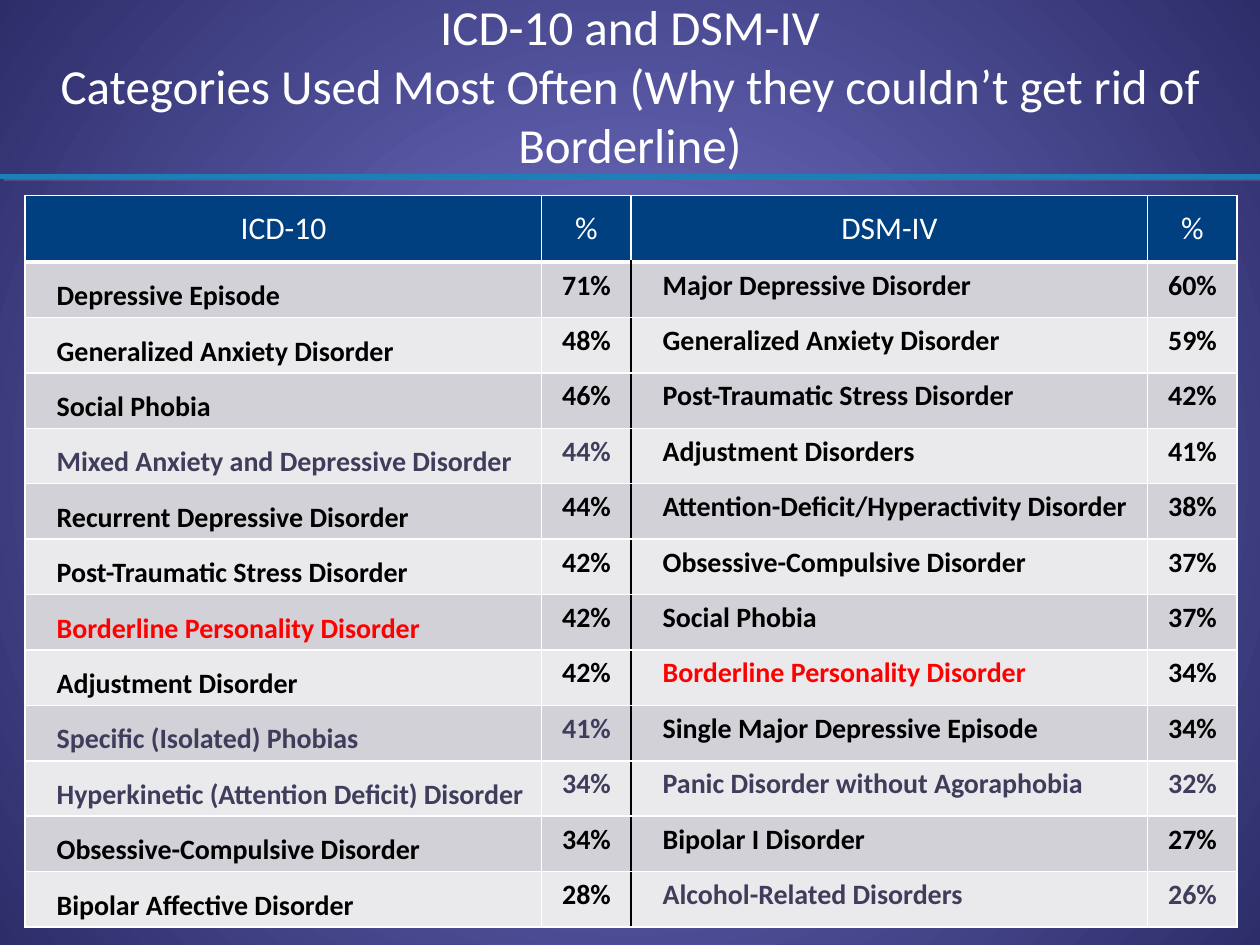
from lxml.etree import SubElement
from pptx import Presentation
from pptx.dml.color import RGBColor
from pptx.enum.shapes import MSO_CONNECTOR
from pptx.enum.text import MSO_ANCHOR, PP_ALIGN
from pptx.oxml import parse_xml
from pptx.oxml.ns import nsdecls, qn
from pptx.util import Inches, Pt

FONT = "Calibri"
WHITE, BLACK, RED, MUTED = "FFFFFF", "000000", "FF0000", "3E3E5C"
HEADER_FILL = "004080"
BAND_FILLS = ("D2D1D7", "EAEAEC")

TITLE = (
    "ICD-10 and DSM-IV",
    "Categories Used Most Often (Why they couldn’t get rid of Borderline)",
)
HEADINGS = ("ICD-10", "%", "DSM-IV", "%")
CATEGORIES = (
    ("Depressive Episode", "71%", "Major Depressive Disorder", "60%"),
    ("Generalized Anxiety Disorder", "48%", "Generalized Anxiety Disorder", "59%"),
    ("Social Phobia", "46%", "Post-Traumatic Stress Disorder", "42%"),
    ("Mixed Anxiety and Depressive Disorder", "44%", "Adjustment Disorders", "41%"),
    ("Recurrent Depressive Disorder", "44%",
     "Attention-Deficit/Hyperactivity Disorder", "38%"),
    ("Post-Traumatic Stress Disorder", "42%", "Obsessive-Compulsive Disorder", "37%"),
    ("Borderline Personality Disorder", "42%", "Social Phobia", "37%"),
    ("Adjustment Disorder", "42%", "Borderline Personality Disorder", "34%"),
    ("Specific (Isolated) Phobias", "41%", "Single Major Depressive Episode", "34%"),
    ("Hyperkinetic (Attention Deficit) Disorder", "34%",
     "Panic Disorder without Agoraphobia", "32%"),
    ("Obsessive-Compulsive Disorder", "34%", "Bipolar I Disorder", "27%"),
    ("Bipolar Affective Disorder", "28%", "Alcohol-Related Disorders", "26%"),
)
HIGHLIGHTED = "Borderline Personality Disorder"
UNMATCHED = {
    "Mixed Anxiety and Depressive Disorder",
    "Specific (Isolated) Phobias",
    "Hyperkinetic (Attention Deficit) Disorder",
    "Panic Disorder without Agoraphobia",
    "Alcohol-Related Disorders",
}


def rgb(value):
    return RGBColor.from_string(value)


def shadow_effect(color, alpha, distance, angle):
    return parse_xml(
        f'<a:effectLst {nsdecls("a")}>'
        f'<a:outerShdw dist="{Pt(distance)}" dir="{angle * 60000}" algn="ctr">'
        f'<a:srgbClr val="{color}"><a:alpha val="{alpha * 1000}"/></a:srgbClr>'
        "</a:outerShdw></a:effectLst>"
    )


def add_run(paragraph, text, size, color, bold=False):
    run = paragraph.add_run()
    run.text = text
    run.font.size = Pt(size)
    run.font.bold = bold
    run.font.color.rgb = rgb(color)
    run.font.name = FONT
    return run


def set_margins(frame, left, top, right, bottom):
    frame.margin_left, frame.margin_top = Inches(left), Inches(top)
    frame.margin_right, frame.margin_bottom = Inches(right), Inches(bottom)


def paint_background(slide, inner, outer):
    fill = slide.background.fill
    fill.gradient()
    for stop, color in zip(fill.gradient_stops, (inner, outer)):
        stop.color.rgb = rgb(color)
    gradient = slide.element.find(".//" + qn("a:gradFill"))
    gradient.remove(gradient.find(qn("a:lin")))
    circle = SubElement(gradient, qn("a:path"), path="circle")
    SubElement(circle, qn("a:fillToRect"), l="50000", t="50000", r="50000", b="50000")


def add_title(slide):
    box = slide.shapes.add_textbox(0, 0, Inches(10), Inches(1.35))
    frame = box.text_frame
    frame.word_wrap = True
    frame.vertical_anchor = MSO_ANCHOR.MIDDLE
    set_margins(frame, 0, 0, 0, 0)
    for index, line in enumerate(TITLE):
        paragraph = frame.add_paragraph() if index else frame.paragraphs[0]
        paragraph.alignment = PP_ALIGN.CENTER
        run = add_run(paragraph, line, 28, WHITE)
        properties = run.font.fill and run._r.get_or_add_rPr()
        properties.find(qn("a:solidFill")).addnext(shadow_effect("8FC3E0", 100, 2, 45))


def add_rule(slide):
    rule = slide.shapes.add_connector(
        MSO_CONNECTOR.STRAIGHT, 0, Inches(1.4), Inches(10), Inches(1.4))
    rule.line.color.rgb = rgb("1E7FB8")
    rule.line.width = Pt(3)
    rule.element.spPr.append(shadow_effect("666699", 75, 2.3, 25))


def set_borders(cell, left=WHITE, right=WHITE, bottom_width=1):
    properties = cell._tc.get_or_add_tcPr()
    borders = (("L", left, 1), ("R", right, 1), ("T", WHITE, 1),
               ("B", WHITE, bottom_width))
    for side, color, width in borders:
        line = SubElement(properties, qn(f"a:ln{side}"), w=str(Pt(width)))
        SubElement(SubElement(line, qn("a:solidFill")), qn("a:srgbClr"), val=color)


def fill_cell(cell, fill):
    cell.fill.solid()
    cell.fill.fore_color.rgb = rgb(fill)


def add_header(table):
    for column, heading in enumerate(HEADINGS):
        cell = table.cell(0, column)
        set_borders(cell, bottom_width=3)
        fill_cell(cell, HEADER_FILL)
        set_margins(cell, 0.05, 0.05, 0.05, 0.05)
        cell.vertical_anchor = MSO_ANCHOR.MIDDLE
        paragraph = cell.text_frame.paragraphs[0]
        paragraph.alignment = PP_ALIGN.CENTER
        add_run(paragraph, heading, 18, WHITE)


def add_category_row(table, row, values):
    for column, value in enumerate(values):
        cell = table.cell(row, column)
        # Black divider between the two classifications
        set_borders(cell, left=BLACK if column == 2 else WHITE,
                    right=BLACK if column == 1 else WHITE)
        fill_cell(cell, BAND_FILLS[(row - 1) % 2])
        paragraph = cell.text_frame.paragraphs[0]
        is_share = column % 2 == 1
        category = values[column - 1] if is_share else value
        color = MUTED if category in UNMATCHED else BLACK
        if is_share:
            paragraph.alignment = PP_ALIGN.CENTER
        elif category == HIGHLIGHTED:
            color = RED
        # Category names are indented; the ICD-10 ones also sit lower
        left = 0.05 if is_share else 0.25
        if column == 0:
            set_margins(cell, left, 0.1, 0.05, 0)
            cell.vertical_anchor = MSO_ANCHOR.MIDDLE
            paragraph.space_before = Pt(2)
        else:
            set_margins(cell, left, 0.05, 0.05, 0.05)
        add_run(paragraph, value, 16, color, bold=True)


def add_category_table(slide):
    frame = slide.shapes.add_table(
        len(CATEGORIES) + 1, len(HEADINGS),
        Inches(0.2), Inches(1.55), Inches(9.62), Inches(5.81))
    table = frame.table
    for column, width in zip(table.columns, (4.1, 0.71) * 2):
        column.width = Inches(width)
    for index, row in enumerate(table.rows):
        row.height = Inches(0.44 if index else 0.53)
    add_header(table)
    for row, values in enumerate(CATEGORIES, start=1):
        add_category_row(table, row, values)


def main():
    presentation = Presentation()
    presentation.slide_width, presentation.slide_height = Inches(10), Inches(7.5)
    slide = presentation.slides.add_slide(presentation.slide_layouts[6])
    paint_background(slide, "7979D1", "2D2D6A")
    add_title(slide)
    add_category_table(slide)
    add_rule(slide)
    presentation.save("out.pptx")


if __name__ == "__main__":
    main()
